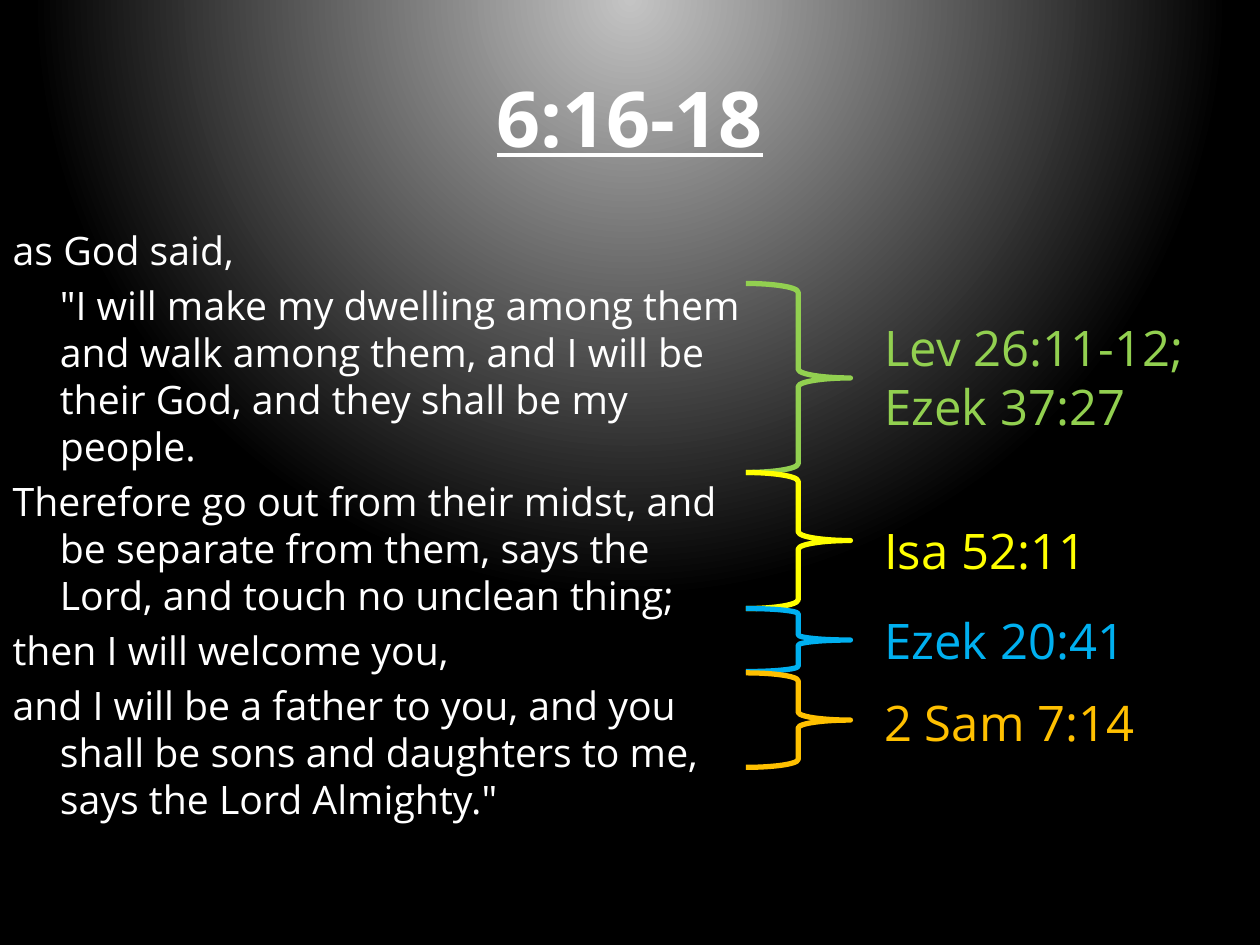
from pptx import Presentation, oxml
from pptx.dml.color import RGBColor
from pptx.enum import shapes, text
from pptx.oxml import ns
from pptx.util import Inches, Pt

FONT = "Open Sans"
COLORS = {
    "white": "FFFFFF",
    "glow": "C4C4C4",
    "black": "000000",
    "green": "92D050",
    "yellow": "FFFF00",
    "blue": "00B0F0",
    "orange": "FFC000",
}
VERSES = [
    "as God said,",
    "\t\"I will make my dwelling among them and walk among them, and I will be "
    "their God, and they shall be my people.",
    "Therefore go out from their midst, and be separate from them, says the "
    "Lord, and touch no unclean thing;",
    "then I will welcome you,",
    "and I will be a father to you, and you shall be sons and daughters to me, "
    "says the Lord Almighty.\"",
]
SOURCES = [
    ("green", 2.25, 1.5, 2.47, 1.04, ["Lev 26:11-12;", "Ezek 37:27"]),
    ("yellow", 3.75, 1.08, 4.08, 0.57, ["Isa 52:11"]),
    ("blue", 4.83, 0.5, 4.8, 0.57, ["Ezek 20:41"]),
    ("orange", 5.34, 0.75, 5.45, 0.57, ["2 Sam 7:14"]),
]


def rgb(color):
    return RGBColor.from_string(COLORS[color])


def paint_background(slide):
    slide.background.fill.gradient()
    gradient = slide.background._cSld.find(".//" + ns.qn("a:gradFill"))
    stops = "".join(
        f'<a:gs pos="{position}"><a:srgbClr val="{COLORS[color]}"/></a:gs>'
        for position, color in ((0, "glow"), (76000, "black"))
    )
    radial = oxml.parse_xml(
        f'<a:gradFill {ns.nsdecls("a")} rotWithShape="1"><a:gsLst>{stops}</a:gsLst>'
        '<a:path path="circle"><a:fillToRect l="50000" t="-80000" r="50000" '
        'b="180000"/></a:path></a:gradFill>'
    )
    gradient.getparent().replace(gradient, radial)


def place(shape, left, top, width, height):
    shape.left, shape.top = Inches(left), Inches(top)
    shape.width, shape.height = Inches(width), Inches(height)


def write_lines(frame, lines, size, color):
    for index, line in enumerate(lines):
        paragraph = frame.add_paragraph() if index else frame.paragraphs[0]
        run = paragraph.add_run()
        run.text = line
        run.font.name = FONT
        run.font.size = Pt(size)
        run.font.color.rgb = rgb(color)


def add_heading(slide):
    heading = slide.shapes.title
    place(heading, 0.5, 0.3, 9, 1.25)
    write_lines(heading.text_frame, ["6:16-18"], 44, "white")
    font = heading.text_frame.paragraphs[0].runs[0].font
    font.bold = font.underline = True


def add_passage(slide):
    passage = slide.placeholders[1]
    place(passage, 0, 1.75, 6, 4.95)
    frame = passage.text_frame
    frame.auto_size = text.MSO_AUTO_SIZE.NONE
    write_lines(frame, VERSES, 22.4, "white")
    for verse in frame.paragraphs:
        verse._p.get_or_add_pPr().append(
            oxml.parse_xml(f'<a:buNone {ns.nsdecls("a")}/>')
        )


def add_brace(slide, color, top, height):
    brace = slide.shapes.add_shape(
        shapes.MSO_SHAPE.RIGHT_BRACE,
        Inches(5.92), Inches(top), Inches(0.83), Inches(height),
    )
    brace.shadow.inherit = False
    brace.fill.background()
    brace.line.color.rgb = rgb(color)
    brace.line.width = Pt(3)


def add_reference(slide, color, top, height, lines):
    reference = slide.shapes.add_textbox(
        Inches(6.92), Inches(top), Inches(2.92), Inches(height)
    )
    frame = reference.text_frame
    frame.word_wrap = True
    frame.auto_size = text.MSO_AUTO_SIZE.SHAPE_TO_FIT_TEXT
    write_lines(frame, lines, 28, color)


def main():
    deck = Presentation()
    deck.slide_width, deck.slide_height = Inches(10), Inches(7.5)
    slide = deck.slides.add_slide(deck.slide_layouts[1])
    paint_background(slide)
    add_heading(slide)
    add_passage(slide)
    for color, brace_top, brace_height, label_top, label_height, lines in SOURCES:
        add_brace(slide, color, brace_top, brace_height)
        add_reference(slide, color, label_top, label_height, lines)
    deck.save("out.pptx")


if __name__ == "__main__":
    main()
